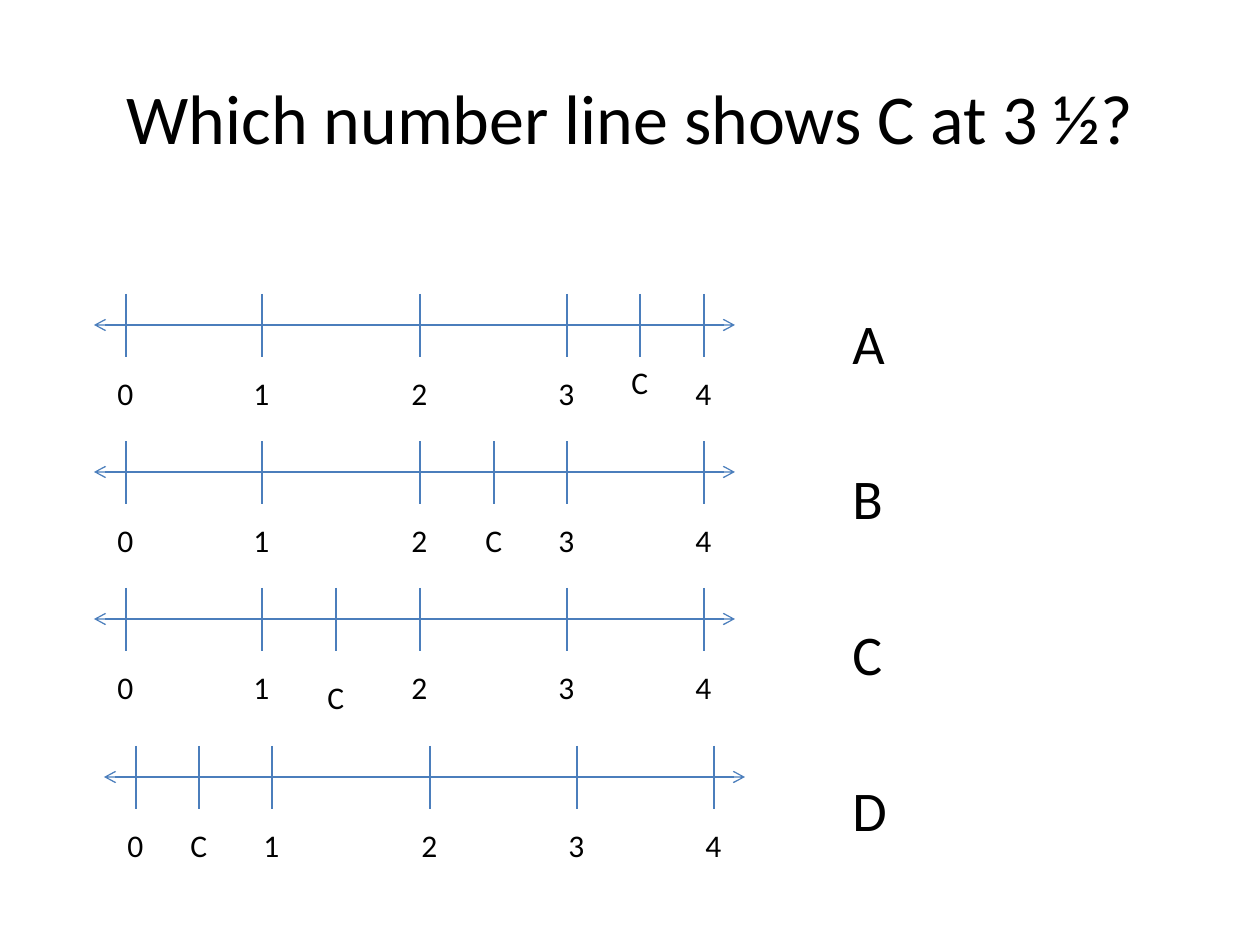
from lxml.etree import SubElement
from pptx import Presentation
from pptx.dml.color import RGBColor
from pptx.enum.shapes import MSO_CONNECTOR
from pptx.enum.text import MSO_ANCHOR, MSO_AUTO_SIZE, PP_ALIGN
from pptx.oxml.ns import qn
from pptx.util import Pt

# Content
TITLE = "Which number line shows C at 3 ½?"
ANSWERS = ["A", "B", "C", "D"]
TICKS = [(0, 126), (1, 262), (2, 420), (3, 567), (4, 704)]  # label, x
# top of ticks, shift right, x of C before the shift, drop of the C label
NUMBER_LINES = [
    (294, 0, 640, 63),
    (441, 0, 494, 74),
    (588, 0, 336, 84),
    (746, 10, 189, 74),
]

# Style
BLACK = RGBColor(0x00, 0x00, 0x00)
BLUE = RGBColor(0x4B, 0x7E, 0xBC)
FONT = "Calibri"
AXIS_LEFT, AXIS_RIGHT = 94, 735
TICK_H, LABEL_DROP = 63, 74
LABEL_W, LABEL_H, LABEL_INDENT = 73, 50, 21


def px(n):
    return round(n * 914400 / 126)


def write(p, text, size):
    r = p.add_run()
    r.text = text
    for name, value in {"name": FONT, "size": Pt(size)}.items():
        setattr(r.font, name, value)
    r.font.color.rgb = BLACK


def add_line(x1, y1, x2, y2, arrows=False):
    c = s.shapes.add_connector(MSO_CONNECTOR.STRAIGHT, px(x1), px(y1), px(x2), px(y2))
    c.line.color.rgb = BLUE
    c.line.width = Pt(0.75)
    if arrows:
        for end in ("a:headEnd", "a:tailEnd"):
            SubElement(c.line._get_or_add_ln(), qn(end), type="arrow")
    SubElement(c._element.spPr, qn("a:effectLst"))


def add_label(text, tick_x, y):
    sp = s.shapes.add_textbox(px(tick_x - LABEL_INDENT), px(y), px(LABEL_W), px(LABEL_H))
    tf = sp.text_frame
    tf.word_wrap = True
    tf.auto_size = MSO_AUTO_SIZE.SHAPE_TO_FIT_TEXT
    write(tf.paragraphs[0], text, 18)


prs = Presentation()
prs.slide_width, prs.slide_height = px(1260), px(945)
s = prs.slides.add_slide(prs.slide_layouts[5])

# Title
title = s.shapes.title
box = {"left": 63, "top": 38, "width": 1134, "height": 157}
for name, value in box.items():
    setattr(title, name, px(value))
tf = title.text_frame
tf.vertical_anchor = MSO_ANCHOR.MIDDLE
tf.paragraphs[0].alignment = PP_ALIGN.CENTER
write(tf.paragraphs[0], TITLE, 40)

# Answer letters, spread by paragraph spacing
tf = s.shapes.add_textbox(px(840), px(220), px(357), px(624)).text_frame
tf.word_wrap = True
tf.margin_top = px(88)
for i, answer in enumerate(ANSWERS):
    p = tf.paragraphs[0] if i == 0 else tf.add_paragraph()
    if i:
        p.space_before = Pt(50.6)
    write(p, answer, 32)

# Number lines with ticks, labels and point C
for top, shift, c_x, c_drop in NUMBER_LINES:
    axis_y = top + TICK_H // 2
    add_line(AXIS_LEFT + shift, axis_y, AXIS_RIGHT + shift, axis_y, arrows=True)
    marks = [(str(n), x, LABEL_DROP) for n, x in TICKS] + [("C", c_x, c_drop)]
    for text, x, drop in marks:
        add_line(x + shift, top, x + shift, top + TICK_H)
        add_label(text, x + shift, top + drop)

prs.save("out.pptx")
